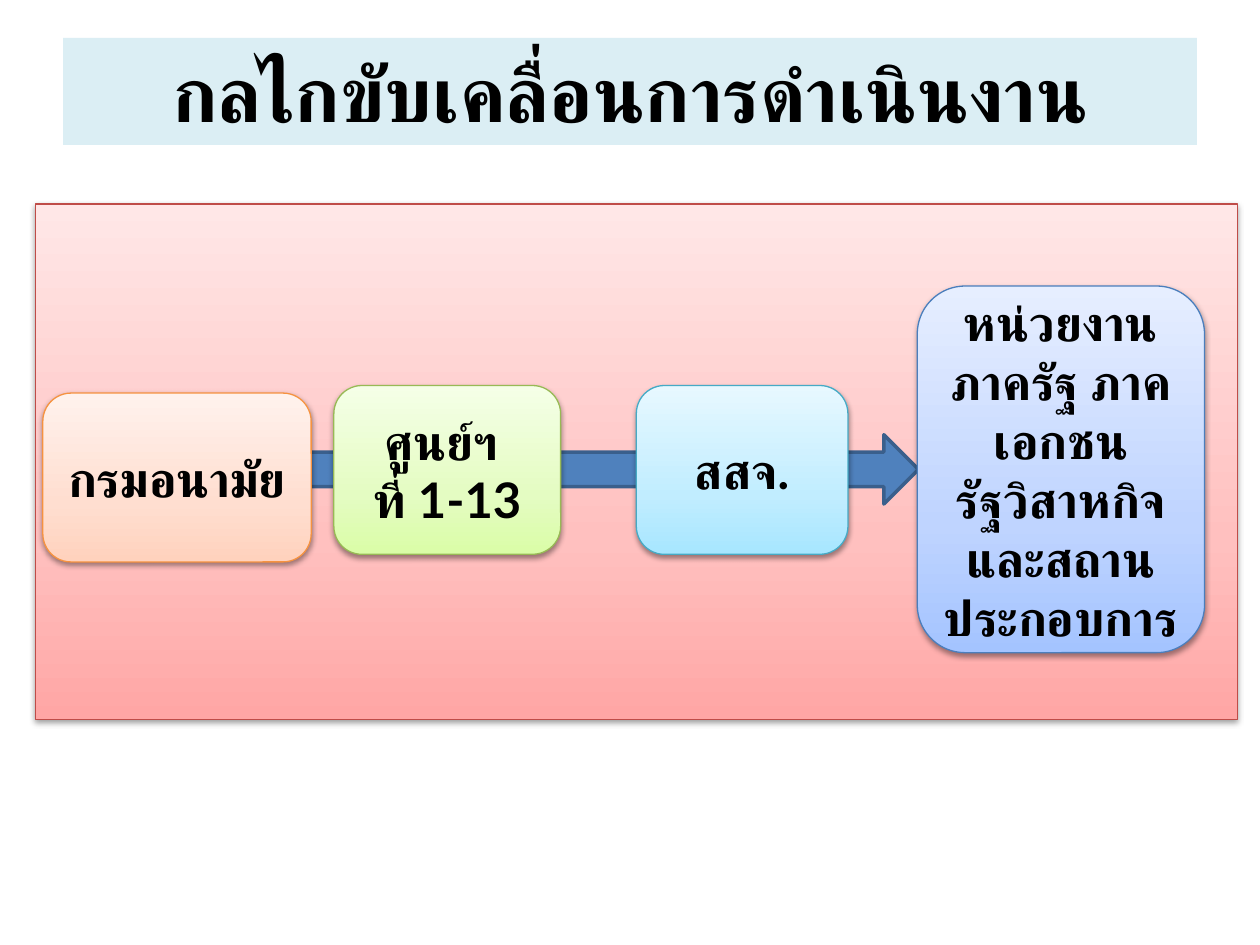
from copy import deepcopy
from lxml import etree
from pptx import Presentation
from pptx.dml.color import RGBColor
from pptx.enum.lang import MSO_LANGUAGE_ID as LANG
from pptx.enum.shapes import MSO_SHAPE as SHAPE
from pptx.enum.text import MSO_ANCHOR, MSO_AUTO_SIZE, PP_ALIGN
from pptx.oxml.ns import qn
from pptx.util import Inches, Pt

FONT = "Lato"
BLACK = RGBColor(0x00, 0x00, 0x00)
TITLE_FILL = RGBColor(0xDB, 0xEE, 0xF4)
ARROW_FILL = RGBColor(0x4F, 0x81, 0xBD)
ARROW_LINE = RGBColor(0x3A, 0x5F, 0x8C)
RED = [RGBColor.from_string(c) for c in ("FFA6A5", "FFC0BF", "FFE7E7", "BF4C48")]
ORANGE = [RGBColor.from_string(c) for c in ("FFD2BD", "FFDED0", "FFF2ED", "F69240")]
GREEN = [RGBColor.from_string(c) for c in ("DAFDA7", "E4FCC2", "F5FFE7", "98B955")]
AQUA = [RGBColor.from_string(c) for c in ("A7E6FF", "C1EDFF", "E7F8FF", "46AAC5")]
BLUE = [RGBColor.from_string(c) for c in ("A4C4FF", "BFD4FF", "E6EEFF", "4B7EBC")]


def add_panel(kind, box, colors):
    sp = s.shapes.add_shape(kind, *map(Inches, box))
    sp.fill.gradient()
    sp.fill.gradient_angle = 90
    gs_list = sp._element.spPr.find(".//" + qn("a:gsLst"))
    gs_list.append(deepcopy(gs_list[0]))
    for stop, position, color in zip(sp.fill.gradient_stops, (0, 0.35, 1), colors):
        stop.position = position
        stop.color.rgb = color
    sp.line.color.rgb = colors[3]
    sp.line.width = Pt(0.75)
    sp.shadow.inherit = False
    effects = sp._element.spPr.find(qn("a:effectLst"))
    shadow = etree.SubElement(effects, qn("a:outerShdw"), blurRad=str(Pt(3.1)),
                              dist=str(Pt(1.6)), dir="5400000", rotWithShape="0")
    shade = etree.SubElement(shadow, qn("a:srgbClr"), val=str(BLACK))
    etree.SubElement(shade, qn("a:alpha"), val="38000")
    return sp


def write_text(sp, lines, size):
    tf = sp.text_frame
    tf.word_wrap = True
    tf.auto_size = MSO_AUTO_SIZE.NONE
    tf.vertical_anchor = MSO_ANCHOR.MIDDLE
    for i, line in enumerate(lines):
        p = tf.add_paragraph() if i else tf.paragraphs[0]
        p.alignment = PP_ALIGN.CENTER
        r = p.add_run()
        r.text = line
        r.font.name = FONT
        r.font.size = Pt(size)
        r.font.bold = True
        r.font.color.rgb = BLACK
        r.font.language_id = LANG.THAI
        etree.SubElement(r._r.rPr, qn("a:cs"), typeface=FONT)


prs = Presentation()
prs.slide_width = Inches(10)
prs.slide_height = Inches(7.5)
s = prs.slides.add_slide(prs.slide_layouts[5])

title = s.shapes.title
title.left, title.top, title.width, title.height = map(Inches, (0.5, 0.3, 9, 0.85))
title.fill.solid()
title.fill.fore_color.rgb = TITLE_FILL
write_text(title, ["กลไกขับเคลื่อนการดำเนินงาน"], 44)

add_panel(SHAPE.RECTANGLE, (0.28, 1.62, 9.54, 4.09), RED)

arrow = s.shapes.add_shape(SHAPE.RIGHT_ARROW, Inches(2.28), Inches(3.45), Inches(5.01), Inches(0.55))
arrow.shadow.inherit = False
arrow.fill.solid()
arrow.fill.fore_color.rgb = ARROW_FILL
arrow.line.color.rgb = ARROW_LINE
arrow.line.width = Pt(2)

agencies = [
    ((0.34, 3.12, 2.13, 1.34), ORANGE, ["กรมอนามัย"]),
    ((2.65, 3.06, 1.8, 1.34), GREEN, ["ศูนย์ฯ ", "ที่ 1-13"]),
    ((5.05, 3.06, 1.68, 1.34), AQUA, ["สสจ."]),
    ((7.28, 2.27, 2.28, 2.91), BLUE,
     ["หน่วยงานภาครัฐ ภาคเอกชน รัฐวิสาหกิจ", "และสถานประกอบการ"]),
]
for box, colors, lines in agencies:
    write_text(add_panel(SHAPE.ROUNDED_RECTANGLE, box, colors), lines, 28)

prs.save("out.pptx")
